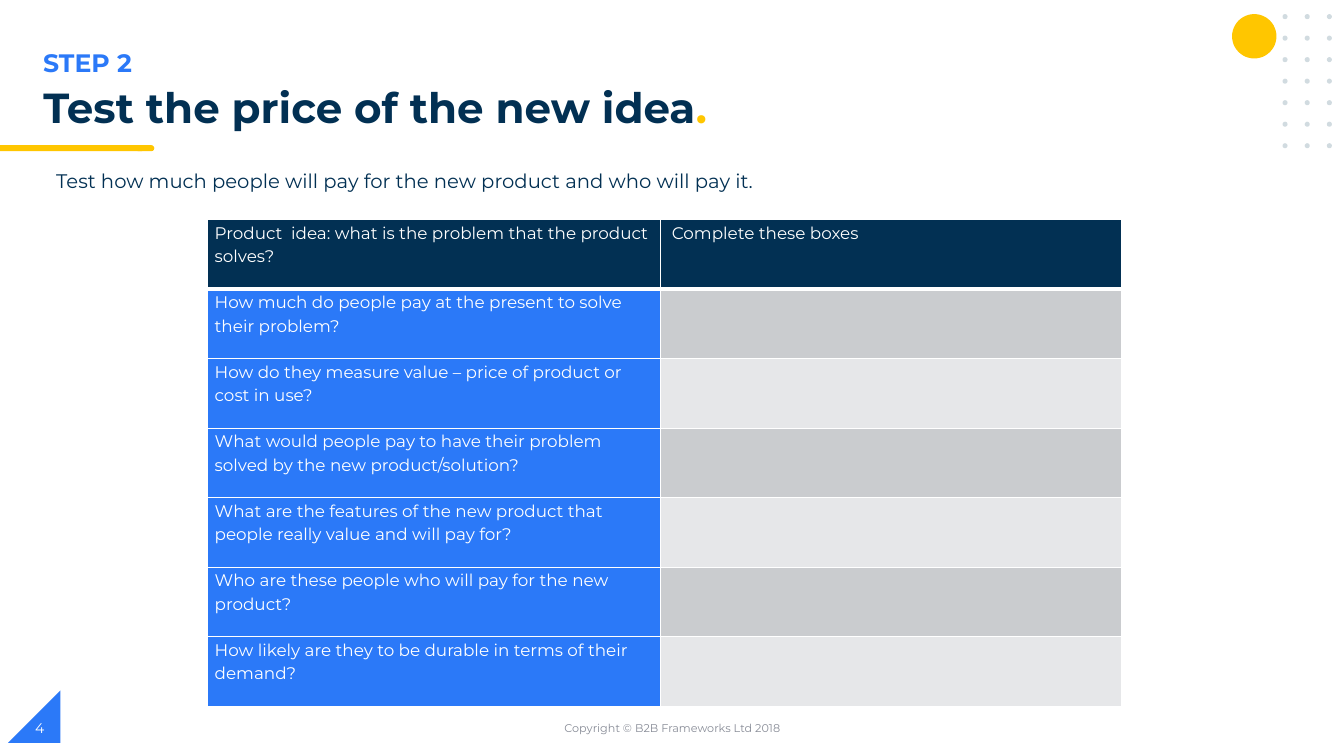
from dataclasses import dataclass
from itertools import product

from lxml.etree import SubElement
from pptx import Presentation
from pptx.dml.color import RGBColor
from pptx.enum.shapes import MSO_SHAPE
from pptx.enum.text import MSO_ANCHOR, PP_ALIGN
from pptx.oxml.ns import qn
from pptx.shapes.autoshape import Shape
from pptx.slide import Slide
from pptx.table import _Cell
from pptx.text.text import Font
from pptx.util import Inches, Pt

FONT = "Montserrat"
NAVY, BLUE, YELLOW, WHITE = "023053", "2B79F8", "FFC600", "FFFFFF"
DOT_GREY, FOOTER_GREY = "D1DBE0", "888C97"
ANSWER_GREYS = ("CACCCF", "E6E7E9")

HEADINGS = (
    "Product  idea: what is the problem that the product solves?",
    " Complete these boxes",
)
QUESTIONS = (
    "How much do people pay at the present to solve their problem?",
    "How do they measure value – price of product or cost in use?",
    "What would people pay to have their problem solved by the new product/solution?",
    "What are the features of the new product that people really value and will pay for?",
    "Who are these people who will pay for the new product?",
    "How likely are they to be durable in terms of their demand?",
)
COLUMN_WIDTHS = (4.49, 4.57)
ROW_HEIGHT = 0.69


@dataclass(frozen=True)
class Area:
    left: float
    top: float
    width: float
    height: float

    def lengths(self) -> tuple[int, int, int, int]:
        return Inches(self.left), Inches(self.top), Inches(self.width), Inches(self.height)


@dataclass(frozen=True)
class Label:
    text: str
    area: Area
    size: float
    color: str
    bold: bool = False
    align: PP_ALIGN = PP_ALIGN.LEFT
    anchor: MSO_ANCHOR = MSO_ANCHOR.TOP


@dataclass(frozen=True)
class Decoration:
    kind: MSO_SHAPE
    area: Area
    color: str


CORNER = Decoration(MSO_SHAPE.RIGHT_TRIANGLE, Area(0.08, 6.85, 0.52, 0.52), BLUE)
DECORATIONS = (
    Decoration(MSO_SHAPE.FLOWCHART_TERMINATOR, Area(1.34, 1.44, 0.19, 0.06), YELLOW),
    Decoration(MSO_SHAPE.RECTANGLE, Area(0, 1.44, 1.41, 0.06), YELLOW),
    Decoration(MSO_SHAPE.OVAL, Area(12.22, 0.14, 0.44, 0.44), YELLOW),
)
LABELS = (
    Label("Copyright © B2B Frameworks Ltd 2018", Area(4.42, 7.02, 4.5, 0.4), 8, FOOTER_GREY,
          align=PP_ALIGN.CENTER, anchor=MSO_ANCHOR.MIDDLE),
    Label("4", Area(0.25, 7.02, 3, 0.4), 10, WHITE, anchor=MSO_ANCHOR.MIDDLE),
    Label("Test how much people will pay for the new product and who will pay it.",
          Area(0.46, 1.63, 9.84, 0.57), 14, NAVY),
    Label("STEP 2", Area(0.33, 0.42, 6.69, 0.4), 18, BLUE, bold=True),
)


def rgb(color: str) -> RGBColor:
    return RGBColor.from_string(color)


def format_font(font: Font, size: float, color: str, bold: bool = False) -> None:
    font.name = FONT
    font.size = Pt(size)
    font.bold = bold
    font.color.rgb = rgb(color)


def add_decoration(page: Slide, decoration: Decoration) -> Shape:
    shape = page.shapes.add_shape(decoration.kind, *decoration.area.lengths())
    shape.shadow.inherit = False
    shape.fill.solid()
    shape.fill.fore_color.rgb = rgb(decoration.color)
    shape.line.fill.background()
    return shape


def add_dot_grid(page: Slide) -> None:
    for row, column in product(range(7), range(3)):
        area = Area(12.72 + column * 0.22, 0.14 + row * 0.2135, 0.05, 0.05)
        add_decoration(page, Decoration(MSO_SHAPE.OVAL, area, DOT_GREY))


def add_label(page: Slide, label: Label) -> None:
    box = page.shapes.add_textbox(*label.area.lengths())
    frame = box.text_frame
    frame.word_wrap = True
    frame.vertical_anchor = label.anchor
    para = frame.paragraphs[0]
    para.text = label.text
    para.alignment = label.align
    format_font(para.font, label.size, label.color, label.bold)


def write_title(page: Slide) -> None:
    title = page.shapes.title
    title.left, title.top, title.width, title.height = Area(0.33, 0.82, 6.95, 0.56).lengths()
    frame = title.text_frame
    frame.word_wrap = True
    frame.vertical_anchor = MSO_ANCHOR.TOP
    para = frame.paragraphs[0]
    para.alignment = PP_ALIGN.LEFT
    para.line_spacing = 0.9
    for text, color in (("Test the price of the new idea", NAVY), (".", YELLOW)):
        span = para.add_run()
        span.text = text
        format_font(span.font, 30, color, bold=True)


def add_border(cell: _Cell, side: str, width: float) -> None:
    line = SubElement(cell._tc.get_or_add_tcPr(), qn(f"a:ln{side}"), w=str(Pt(width)))
    SubElement(SubElement(line, qn("a:solidFill")), qn("a:srgbClr"), val=WHITE)


def format_cell(cell: _Cell, text: str, fill: str, top: float, bottom: float) -> None:
    for side, width in (("L", 1), ("R", 1), ("T", top), ("B", bottom)):
        add_border(cell, side, width)
    cell.fill.solid()
    cell.fill.fore_color.rgb = rgb(fill)
    cell.margin_left = cell.margin_right = Inches(0.07)
    cell.margin_top = cell.margin_bottom = 0
    cell.vertical_anchor = MSO_ANCHOR.TOP
    para = cell.text_frame.paragraphs[0]
    para.text = text
    para.line_spacing = 1.15
    format_font(para.font, 12, WHITE)


def add_question_table(page: Slide) -> None:
    row_count = len(QUESTIONS) + 1
    area = Area(2.06, 2.18, sum(COLUMN_WIDTHS), ROW_HEIGHT * row_count)
    table = page.shapes.add_table(row_count, len(COLUMN_WIDTHS), *area.lengths()).table
    table.first_row = table.horz_banding = False
    for column, width in zip(table.columns, COLUMN_WIDTHS):
        column.width = Inches(width)
    for row in table.rows:
        row.height = Inches(ROW_HEIGHT)
    for column, heading in enumerate(HEADINGS):
        format_cell(table.cell(0, column), heading, NAVY, top=1, bottom=3)
    for index, question in enumerate(QUESTIONS):
        top = 3 if index == 0 else 1
        format_cell(table.cell(index + 1, 0), question, BLUE, top, bottom=1)
        format_cell(table.cell(index + 1, 1), "", ANSWER_GREYS[index % 2], top, bottom=1)


def main() -> None:
    deck = Presentation()
    deck.slide_width, deck.slide_height = Inches(13.33), Inches(7.5)
    page = deck.slides.add_slide(deck.slide_layouts.get_by_name("Title Only"))
    corner = add_decoration(page, CORNER)
    corner._element.spPr.find(qn("a:xfrm")).set("flipH", "1")
    for decoration in DECORATIONS:
        add_decoration(page, decoration)
    add_dot_grid(page)
    write_title(page)
    for label in LABELS:
        add_label(page, label)
    add_question_table(page)
    deck.save("out.pptx")


if __name__ == "__main__":
    main()
